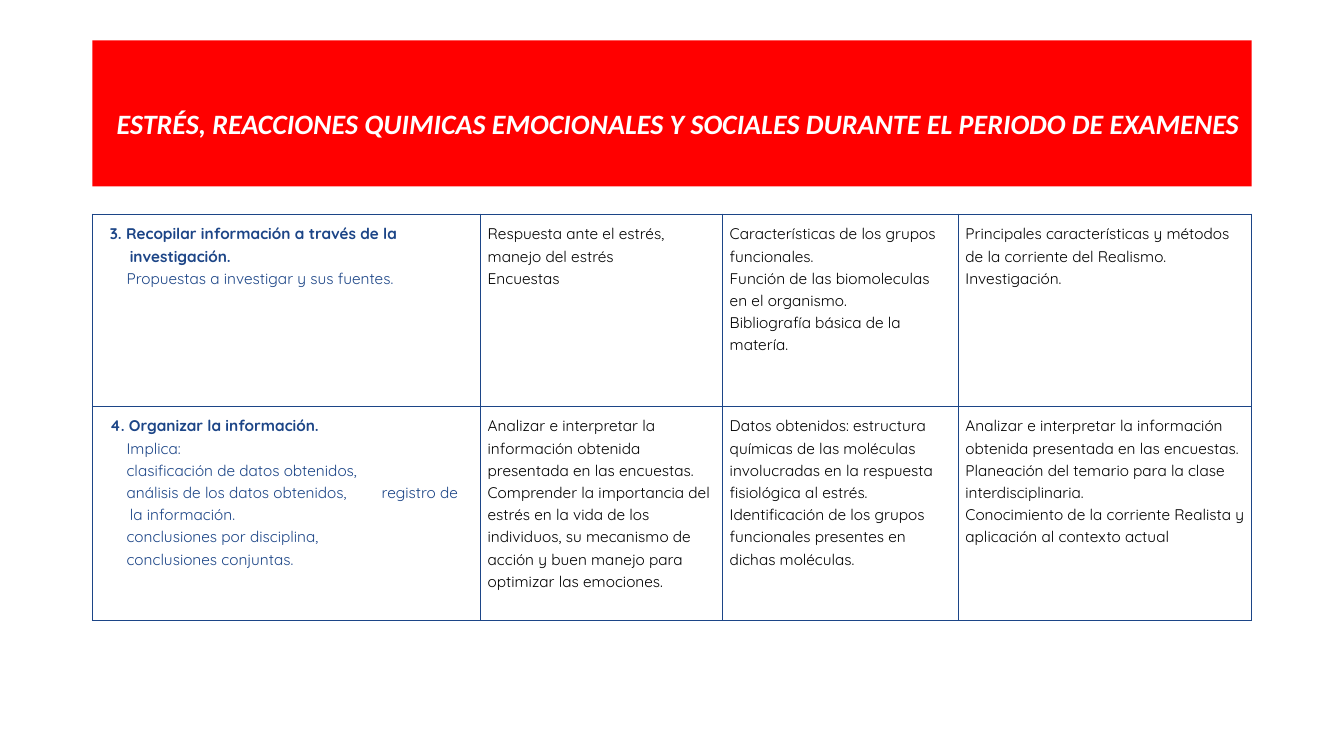
from itertools import product

from pptx import Presentation
from pptx.dml.color import RGBColor
from pptx.enum.text import MSO_ANCHOR, PP_ALIGN
from pptx.oxml.ns import qn
from pptx.util import Cm, Pt
from lxml.etree import SubElement

RED, WHITE, BLACK, NAVY = "FF0000", "FFFFFF", "000000", "1C4587"
LEFT, WIDTH = Cm(2.33), Cm(29.21)
COLUMN_WIDTHS = (9.78, 6.1, 5.94, 7.39)
ROW_HEIGHTS = (4.84, 5.4)
TAB_POSITION = Cm(7.1)
BODY_FONT = {"name": "Quicksand", "size": Pt(11), "bold": False}
TITLE_FONT = {"name": "Calibri", "size": Pt(20), "bold": True, "italic": True}
TITLE_FRAME = {"margin_left": Cm(0.61), "margin_right": Cm(0.1),
               "margin_top": Cm(0.74), "margin_bottom": Cm(0.13),
               "vertical_anchor": MSO_ANCHOR.MIDDLE, "word_wrap": True}
CELL_FORMAT = {"margin_left": Cm(0.18), "margin_right": Cm(0.17),
               "margin_top": Cm(0.18), "margin_bottom": Cm(0.18),
               "vertical_anchor": MSO_ANCHOR.TOP}

TITLE = ("ESTRÉS, REACCIONES QUIMICAS EMOCIONALES Y SOCIALES "
         "DURANTE EL PERIODO DE EXAMENES")
STAGES = [
    [
        ["3. Recopilar información a través de la investigación.",
         "Propuestas a investigar y sus fuentes."],
        ["Respuesta ante el estrés, manejo del estrés",
         "Encuestas"],
        ["Características de los grupos funcionales.",
         "Función de las biomoleculas en el organismo.",
         "Bibliografía básica de la matería."],
        ["Principales características y métodos de la corriente del Realismo.",
         "Investigación."],
    ],
    [
        ["4. Organizar la información.",
         "Implica:",
         "clasificación de datos obtenidos,",
         "análisis de los datos obtenidos,\tregistro de la información.",
         "conclusiones por disciplina,",
         "conclusiones conjuntas."],
        ["Analizar e interpretar la información obtenida presentada en las encuestas.",
         "Comprender la importancia del estrés en la vida de los individuos, "
         "su mecanismo de acción y buen manejo para optimizar las emociones."],
        ["Datos obtenidos: estructura químicas de las moléculas involucradas en la "
         "respuesta fisiológica al estrés. Identificación de los grupos funcionales "
         "presentes en dichas moléculas."],
        ["Analizar e interpretar la información obtenida presentada en las encuestas.",
         "Planeación del temario para la clase interdisciplinaria.",
         "Conocimiento de la corriente Realista y aplicación al contexto actual"],
    ],
]


def color(value):
    return RGBColor.from_string(value)


def apply_format(target, values):
    for name, value in values.items():
        setattr(target, name, value)


def write_span(para, text, font_format, font_color):
    span = para.add_run()
    span.text = text
    apply_format(span.font, font_format)
    span.font.color.rgb = color(font_color)


def set_hanging_indent(para, first_line):
    """Indent a paragraph of the stage column, with a tab stop if it has a tab."""
    properties = para._p.get_or_add_pPr()
    properties.set("marL", str(Cm(0.76)))
    properties.set("indent", str(first_line))
    if "\t" in para.text:
        stops = SubElement(properties, qn("a:tabLst"))
        SubElement(stops, qn("a:tab"), pos=str(TAB_POSITION), algn="l")


def set_borders(cell):
    properties = cell._tc.get_or_add_tcPr()
    for side in ("lnL", "lnR", "lnT", "lnB"):
        line = SubElement(properties, qn(f"a:{side}"), w=str(Pt(1)))
        fill = SubElement(line, qn("a:solidFill"))
        SubElement(fill, qn("a:srgbClr"), val=NAVY)


def fill_cell(cell, lines, is_stage):
    set_borders(cell)
    cell.fill.background()
    apply_format(cell, CELL_FORMAT)
    frame = cell.text_frame
    for index, text in enumerate(lines):
        para = frame.add_paragraph() if index else frame.paragraphs[0]
        para.line_spacing = 1.15
        heading = is_stage and index == 0
        write_span(para, text, {**BODY_FONT, "bold": heading},
                   NAVY if is_stage else BLACK)
        if is_stage:
            set_hanging_indent(para, Cm(-0.5 if heading else -0.08))


def add_title(page):
    box = page.shapes.title
    apply_format(box, {"left": LEFT, "top": Cm(1.02),
                       "width": WIDTH, "height": Cm(3.68)})
    box.fill.solid()
    box.fill.fore_color.rgb = color(RED)
    apply_format(box.text_frame, TITLE_FRAME)
    para = box.text_frame.paragraphs[0]
    apply_format(para, {"alignment": PP_ALIGN.LEFT, "line_spacing": 0.9})
    write_span(para, TITLE, TITLE_FONT, WHITE)


def add_stage_table(page):
    table = page.shapes.add_table(
        len(ROW_HEIGHTS), len(COLUMN_WIDTHS), LEFT, Cm(5.4),
        WIDTH, Cm(sum(ROW_HEIGHTS))).table
    apply_format(table, {"first_row": False, "horz_banding": False})
    for column, width in zip(table.columns, COLUMN_WIDTHS):
        column.width = Cm(width)
    for row, height in zip(table.rows, ROW_HEIGHTS):
        row.height = Cm(height)
    for row, column in product(range(len(ROW_HEIGHTS)), range(len(COLUMN_WIDTHS))):
        fill_cell(table.cell(row, column), STAGES[row][column], column == 0)


def main():
    deck = Presentation()
    apply_format(deck, {"slide_width": Cm(33.87), "slide_height": Cm(19.05)})
    page = deck.slides.add_slide(deck.slide_layouts.get_by_name("Title Only"))
    add_title(page)
    add_stage_table(page)
    deck.save("out.pptx")


if __name__ == "__main__":
    main()
